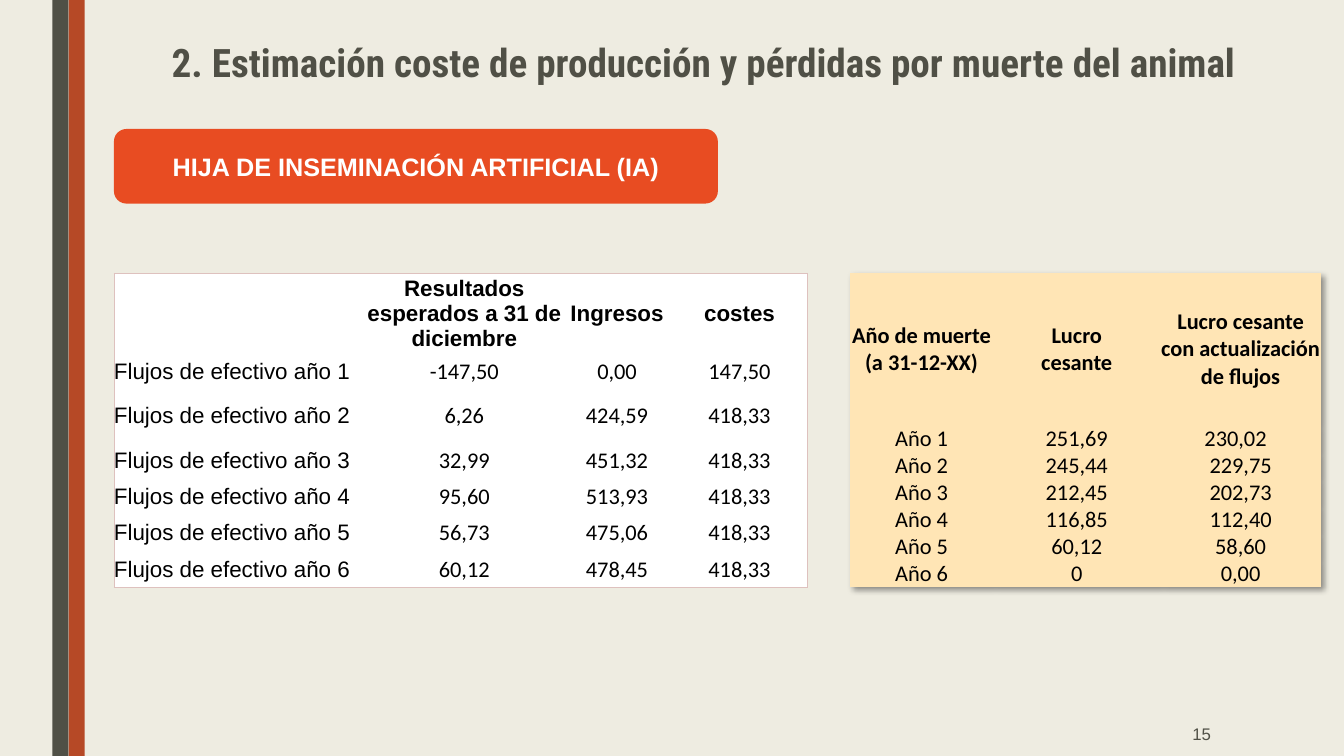
from lxml import etree
from pptx import Presentation
from pptx.dml.color import RGBColor
from pptx.enum.shapes import MSO_SHAPE as SHAPE
from pptx.enum.text import MSO_ANCHOR as ANCHOR, PP_ALIGN as ALIGN
from pptx.oxml import parse_xml
from pptx.oxml.ns import nsdecls, qn
from pptx.util import Pt

PX = 9144
COLORS = {
    "bg": "EEECE1", "dark": "505046", "rust": "B64926", "orange": "E84C22",
    "white": "FFFFFF", "black": "000000", "cream": "FFE5B5", "border": "DEC1BE",
}
TITLE = "2. Estimación coste de producción y pérdidas por muerte del animal"
BADGE = "HIJA DE INSEMINACIÓN ARTIFICIAL (IA)"
PAGE = "15"
BARS = [(68, "rust"), (52, "dark")]

FLOWS = [
    ("", "Resultados esperados a 31 de diciembre", "Ingresos", "costes"),
    ("Flujos de efectivo año 1", "-147,50", "0,00", "147,50"),
    ("Flujos de efectivo año 2", "6,26", "424,59", "418,33"),
    ("Flujos de efectivo año 3", "32,99", "451,32", "418,33"),
    ("Flujos de efectivo año 4", "95,60", "513,93", "418,33"),
    ("Flujos de efectivo año 5", "56,73", "475,06", "418,33"),
    ("Flujos de efectivo año 6", "60,12", "478,45", "418,33"),
]
LOSSES = [
    ("Año de muerte (a 31-12-XX)", "Lucro\ncesante", "Lucro cesante con actualización de flujos"),
    ("Año 1", "251,69", "230,02"),
    ("Año 2", "245,44", "229,75"),
    ("Año 3", "212,45", "202,73"),
    ("Año 4", "116,85", "112,40"),
    ("Año 5", "60,12", "58,60"),
    ("Año 6", "0", "0,00"),
]
SHADOW = (
    f'<a:effectLst {nsdecls("a")}><a:outerShdw blurRad="50800" dist="38100" dir="2700000" '
    'algn="tl" rotWithShape="0"><a:srgbClr val="000000"><a:alpha val="40000"/></a:srgbClr>'
    '</a:outerShdw></a:effectLst>'
)
NO_STYLE = "{2D5ABB26-0587-4C30-8999-92F81FD0307C}"


def rgb(name):
    return RGBColor.from_string(COLORS[name])


def write(tf, text, size=16, font="Arial", color="black", bold=False, align=ALIGN.CENTER, spacing=None):
    for i, line in enumerate(text.split("\n")):
        p = tf.add_paragraph() if i else tf.paragraphs[0]
        p.alignment = align
        p.line_spacing = spacing
        r = p.add_run()
        r.text = line
        r.font.size, r.font.name, r.font.bold = Pt(size), font, bold
        r.font.color.rgb = rgb(color)


def add_box(slide, kind, box, fill):
    sp = slide.shapes.add_shape(kind, *(v * PX for v in box))
    sp.shadow.inherit = False
    sp.fill.solid()
    sp.fill.fore_color.rgb = rgb(fill)
    sp.line.fill.background()
    return sp


def add_text(slide, box, text, anchor, **fmt):
    tf = slide.shapes.add_textbox(*(v * PX for v in box)).text_frame
    tf.word_wrap = True
    tf.vertical_anchor = anchor
    write(tf, text, **fmt)


def add_border(cell, sides):
    tc_pr = cell._tc.get_or_add_tcPr()
    for i, side in enumerate(sides):
        ln = parse_xml(
            f'<a:ln{side} {nsdecls("a")} w="6350"><a:solidFill>'
            f'<a:srgbClr val="{COLORS["border"]}"/></a:solidFill></a:ln{side}>'
        )
        tc_pr.insert(i, ln)


def add_grid(slide, left, top, rows, widths, heights, fill, cell_format):
    box = (left, top, sum(widths), sum(heights))
    table = slide.shapes.add_table(len(rows), len(widths), *(v * PX for v in box)).table
    table.first_row = table.horz_banding = False
    table._tbl.tblPr.find(qn("a:tableStyleId")).text = NO_STYLE
    for column, width in zip(table.columns, widths):
        column.width = width * PX
    for row, height in zip(table.rows, heights):
        row.height = height * PX
    for i, values in enumerate(rows):
        for j, value in enumerate(values):
            cell = table.cell(i, j)
            cell.margin_left = cell.margin_right = cell.margin_top = cell.margin_bottom = 0
            cell.vertical_anchor = ANCHOR.MIDDLE
            cell.fill.solid()
            cell.fill.fore_color.rgb = rgb(fill)
            if value:
                write(cell.text_frame, value, bold=i == 0, **cell_format(i, j))
    return table


def flow_format(i, j):
    return {
        "font": "Calibri" if i and j else "Arial",
        "align": ALIGN.CENTER if j else ALIGN.LEFT,
    }


def loss_format(i, j):
    return {"font": "Calibri"}


def main():
    prs = Presentation()
    prs.slide_width, prs.slide_height = 1333 * PX, 750 * PX
    s = prs.slides.add_slide(prs.slide_layouts[6])
    s.background.fill.solid()
    s.background.fill.fore_color.rgb = rgb("bg")

    for left, color in BARS:
        add_box(s, SHAPE.RECTANGLE, (left, 0, 16, 750), color)
    add_text(s, (86, 39, 1223, 62), TITLE, ANCHOR.TOP, size=28,
             font="Roboto Condensed", color="dark", bold=True, spacing=0.89)
    badge = add_box(s, SHAPE.ROUNDED_RECTANGLE, (113, 128, 599, 74), "orange")
    badge.text_frame.vertical_anchor = ANCHOR.MIDDLE
    write(badge.text_frame, BADGE, size=18, color="white", bold=True)

    losses = add_grid(s, 843, 271, LOSSES, [142, 166, 159], [151] + [26] * 6, "cream", loss_format)
    losses.cell(1, 2).margin_right = 10 * PX
    losses._tbl.tblPr.insert(0, etree.fromstring(SHADOW))

    flows = add_grid(s, 113, 271, FLOWS, [250, 195, 108, 135],
                     [71, 36, 52] + [36] * 4, "white", flow_format)
    last_row, last_col = len(FLOWS) - 1, len(FLOWS[0]) - 1
    for i in range(last_row + 1):
        for j in range(last_col + 1):
            edges = [("L", j == 0), ("R", j == last_col), ("T", i == 0), ("B", i == last_row)]
            add_border(flows.cell(i, j), [side for side, outer in edges if outer])

    add_text(s, (1036, 706, 175, 44), PAGE, ANCHOR.MIDDLE, size=12, color="dark", align=ALIGN.RIGHT)
    prs.save("out.pptx")


if __name__ == "__main__":
    main()
